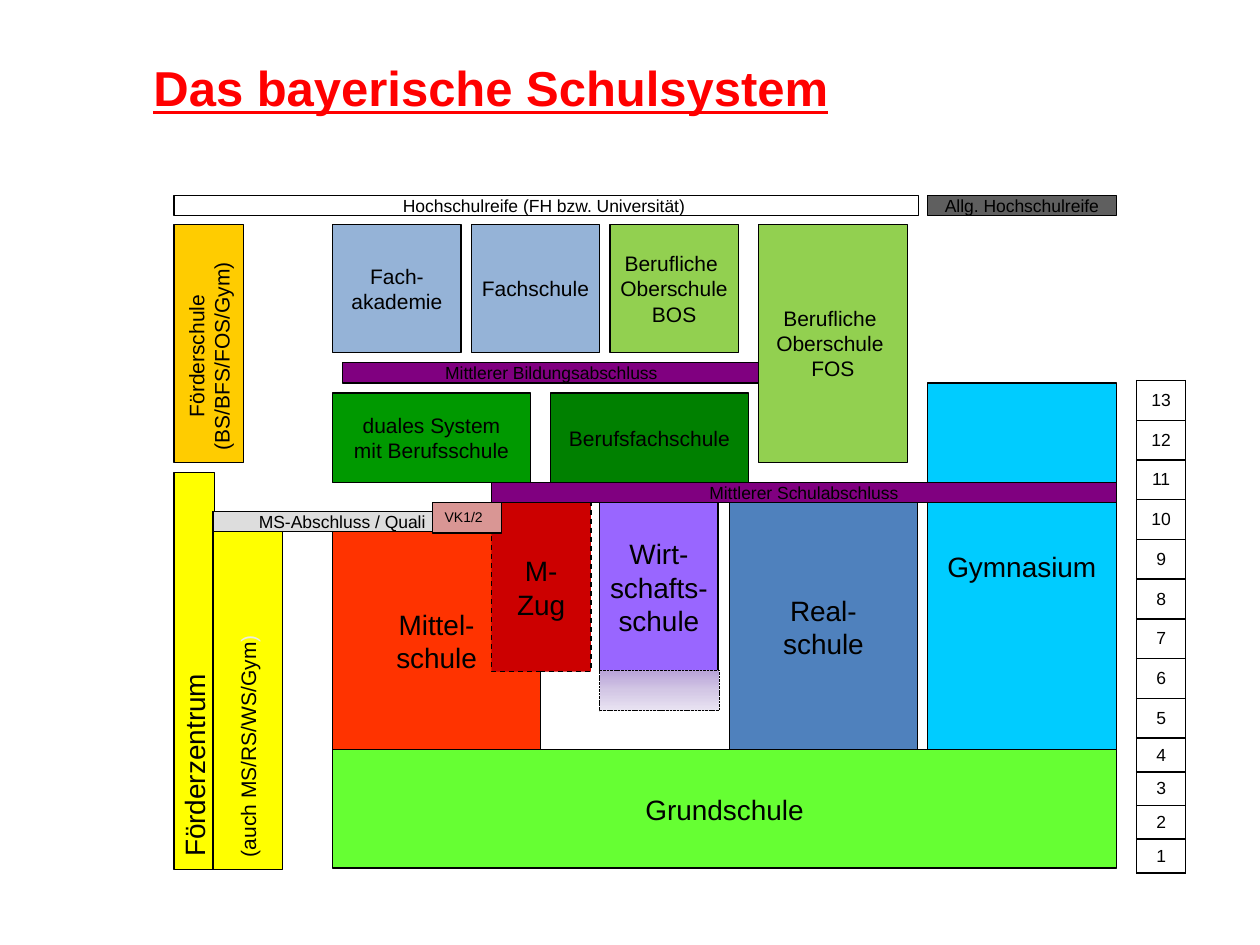
from copy import deepcopy

from lxml import etree
from pptx import Presentation
from pptx.dml.color import RGBColor
from pptx.enum import dml, shapes, text
from pptx.oxml import ns
from pptx.util import Inches, Pt

BLACK = RGBColor(0x00, 0x00, 0x00)
RED = RGBColor(0xFF, 0x00, 0x00)
ORANGE_RED = RGBColor(0xFF, 0x33, 0x00)
DARK_RED = RGBColor(0xCC, 0x00, 0x00)
VIOLET = RGBColor(0x99, 0x66, 0xFF)
BLUE = RGBColor(0x4F, 0x81, 0xBD)
LIGHT_BLUE = RGBColor(0x95, 0xB3, 0xD7)
CYAN = RGBColor(0x00, 0xCC, 0xFF)
PURPLE = RGBColor(0x80, 0x00, 0x80)
LIME = RGBColor(0x66, 0xFF, 0x33)
LEAF = RGBColor(0x92, 0xD0, 0x50)
GREEN = RGBColor(0x00, 0x99, 0x00)
DARK_GREEN = RGBColor(0x00, 0x80, 0x00)
YELLOW = RGBColor(0xFF, 0xFF, 0x00)
AMBER = RGBColor(0xFF, 0xCC, 0x00)
SILVER = RGBColor(0xDD, 0xDD, 0xDD)
GRAY = RGBColor(0x5F, 0x5F, 0x5F)
CREAM = RGBColor(0xEE, 0xEC, 0xE1)
ROSE = RGBColor(0xD9, 0x96, 0x94)
LILAC_STOPS = (
    (0, RGBColor(0xB8, 0xA3, 0xD8)),
    (0.5, RGBColor(0xD3, 0xC7, 0xE5)),
    (1, RGBColor(0xE9, 0xE3, 0xF2)),
)

FONT = "Arial"
CENTER = text.PP_ALIGN.CENTER
UPPER_GRADES = range(13, 4, -1)
PRIMARY_GRADES = range(4, 0, -1)

SCHOOLS = (
    ("Mittel-\nschule", 2.64, 4.22, 1.65, 1.73, ORANGE_RED, 16),
    ("M-\nZug", 3.9, 3.99, 0.79, 1.34, DARK_RED, 16),
    ("Wirt-\nschafts-\nschule", 4.76, 3.99, 0.94, 1.34, VIOLET, 16),
    ("Real-\nschule", 5.79, 3.99, 1.49, 1.97, BLUE, 16),
    ("Gymnasium", 7.36, 3.04, 1.5, 2.91, CYAN, 16),
    ("Mittlerer Schulabschluss", 3.9, 3.83, 4.96, 0.16, PURPLE, 10),
    ("Grundschule", 2.64, 5.95, 6.22, 0.94, LIME, 16),
    ("Förderzentrum", 1.38, 3.75, 0.32, 3.15, YELLOW, 16),
    ("Förderschule\n(BS/BFS/FOS/Gym)", 1.38, 1.78, 0.55, 1.89, AMBER, 12),
    ("Hochschulreife (FH bzw. Universität) ", 1.38, 1.55, 5.91, 0.16, None, 10),
    ("duales System\nmit Berufsschule", 2.64, 3.12, 1.57, 0.71, GREEN, 12),
    ("Berufsfachschule", 4.37, 3.12, 1.57, 0.71, DARK_GREEN, 12),
    ("Mittlerer Bildungsabschluss", 2.72, 2.88, 3.31, 0.16, PURPLE, 10),
    ("Fach-\nakademie", 2.64, 1.78, 1.02, 1.02, LIGHT_BLUE, 12),
    ("Fachschule", 3.74, 1.78, 1.02, 1.02, LIGHT_BLUE, 12),
    ("Berufliche \nOberschule\nBOS", 4.84, 1.78, 1.02, 1.02, LEAF, 12),
    ("Berufliche \nOberschule \nFOS", 6.02, 1.78, 1.18, 1.89, LEAF, 12),
    ("(auch MS/RS/WS/Gym", 1.69, 4.06, 0.55, 2.84, YELLOW, 12),
    ("MS-Abschluss / Quali", 1.69, 4.06, 2.05, 0.16, SILVER, 10),
    ("Allg. Hochschulreife", 7.36, 1.55, 1.5, 0.16, GRAY, 10),
)
VERTICAL = {"Förderzentrum", "Förderschule\n(BS/BFS/FOS/Gym)", "(auch MS/RS/WS/Gym"}


def style_span(span, size, color=BLACK):
    span.font.name = FONT
    span.font.size = Pt(size)
    span.font.color.rgb = color


def write(frame, words, size, color=BLACK, align=CENTER):
    frame.text = words
    for para in frame.paragraphs:
        para.alignment = align
        for span in para.runs:
            style_span(span, size, color)


def add_box(page, left, top, width, height, line_width=0.75):
    box = page.shapes.add_shape(
        shapes.MSO_SHAPE.RECTANGLE, Inches(left), Inches(top), Inches(width), Inches(height)
    )
    box.shadow.inherit = False
    box.line.color.rgb = BLACK
    box.line.width = Pt(line_width)
    return box


def fill_box(box, color):
    if color is None:
        box.fill.background()
    else:
        box.fill.solid()
        box.fill.fore_color.rgb = color


def add_school(page, words, left, top, width, height, color, size):
    box = add_box(page, left, top, width, height)
    fill_box(box, color)
    frame = box.text_frame
    frame.word_wrap = False
    frame.vertical_anchor = text.MSO_ANCHOR.MIDDLE
    write(frame, words, size)
    if words in VERTICAL:
        box.rotation = 180
        box.element.txBody.bodyPr.set("vert", "eaVert")
    return box


def add_entry_stage(page):
    box = add_box(page, 4.76, 5.32, 0.95, 0.32, 0.5)
    box.line.dash_style = dml.MSO_LINE.SQUARE_DOT
    box.element.spPr.find(".//" + ns.qn("a:prstDash")).set("val", "sysDash")
    box.fill.gradient()
    box.fill.gradient_angle = 270
    stop_list = box.element.spPr.find(".//" + ns.qn("a:gsLst"))
    stop_list.append(deepcopy(stop_list[-1]))
    for stop, (position, color) in zip(box.fill.gradient_stops, LILAC_STOPS):
        stop.position = position
        stop.color.rgb = color


def add_bridge_class(page):
    box = add_box(page, 3.43, 3.99, 0.55, 0.24)
    fill_box(box, ROSE)
    frame = box.text_frame
    frame.vertical_anchor = text.MSO_ANCHOR.TOP
    frame.auto_size = text.MSO_AUTO_SIZE.SHAPE_TO_FIT_TEXT
    write(frame, "VK1/2", 8, align=text.PP_ALIGN.LEFT)


def add_title(page):
    title = page.shapes.title
    title.left, title.top = Inches(1.08), Inches(0.41)
    title.width, title.height = Inches(5.63), Inches(0.57)
    frame = title.text_frame
    frame.word_wrap = True
    frame.vertical_anchor = text.MSO_ANCHOR.TOP
    frame.auto_size = text.MSO_AUTO_SIZE.SHAPE_TO_FIT_TEXT
    write(frame, "Das bayerische Schulsystem", 28, RED)
    font = frame.paragraphs[0].runs[0].font
    font.bold = True
    font.underline = True


def border_cell(cell):
    properties = cell._tc.get_or_add_tcPr()
    for position, side in enumerate(("lnL", "lnR", "lnT", "lnB")):
        line = etree.Element(ns.qn("a:" + side), w=str(Pt(1)))
        fill = etree.SubElement(line, ns.qn("a:solidFill"))
        etree.SubElement(fill, ns.qn("a:srgbClr"), val=str(BLACK))
        properties.insert(position, line)


def add_grades(page):
    grades = [*UPPER_GRADES, *PRIMARY_GRADES]
    upper_height = Inches(2.84) // len(UPPER_GRADES)
    primary_height = Inches(1.07) // len(PRIMARY_GRADES)
    table = page.shapes.add_table(
        len(grades), 1, Inches(9.02), Inches(3.02), Inches(0.39), Inches(3.91)
    ).table
    table.first_row = False
    table.horz_banding = False
    for row, grade in zip(table.rows, grades):
        row.height = upper_height if grade in UPPER_GRADES else primary_height
        cell = row.cells[0]
        cell.fill.background()
        cell.vertical_anchor = text.MSO_ANCHOR.MIDDLE
        write(cell.text_frame, str(grade), 10)
        border_cell(cell)


def main():
    deck = Presentation()
    deck.slide_width, deck.slide_height = Inches(10), Inches(7.5)
    page = deck.slides.add_slide(deck.slide_layouts[5])
    add_title(page)
    add_grades(page)
    boxes = {school[0]: add_school(page, *school) for school in SCHOOLS}
    boxes["M-\nZug"].line.dash_style = dml.MSO_LINE.DASH
    bracket = boxes["(auch MS/RS/WS/Gym"].text_frame.paragraphs[0].add_run()
    bracket.text = ")"
    style_span(bracket, 12, CREAM)
    add_entry_stage(page)
    add_bridge_class(page)
    deck.save("out.pptx")


if __name__ == "__main__":
    main()
